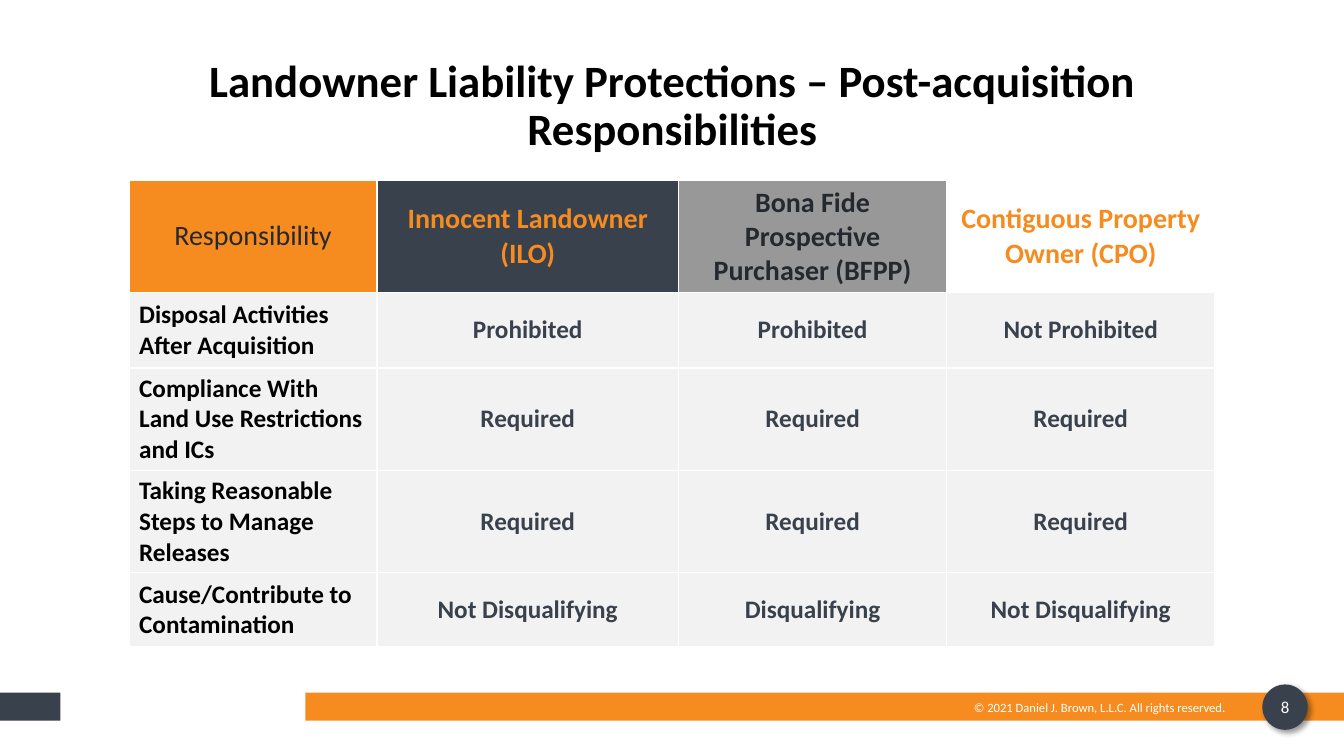
from lxml import etree
from pptx import Presentation
from pptx.dml.color import RGBColor
from pptx.enum.shapes import MSO_SHAPE
from pptx.enum.text import MSO_ANCHOR, MSO_AUTO_SIZE, PP_ALIGN
from pptx.oxml.ns import nsdecls
from pptx.util import Pt

RECT, OVAL = MSO_SHAPE.RECTANGLE, MSO_SHAPE.OVAL
LEFT, MID, RIGHT = PP_ALIGN.LEFT, PP_ALIGN.CENTER, PP_ALIGN.RIGHT
TOP, CENTER = MSO_ANCHOR.TOP, MSO_ANCHOR.MIDDLE
FIXED = MSO_AUTO_SIZE.NONE

ORANGE = RGBColor(0xF6, 0x8C, 0x1F)
SLATE = RGBColor(0x39, 0x41, 0x4D)
DARK = RGBColor(0x24, 0x29, 0x30)
GRAY = RGBColor(0x98, 0x98, 0x98)
PALE = RGBColor(0xF2, 0xF2, 0xF2)
WHITE = RGBColor(0xFF, 0xFF, 0xFF)
BLACK = RGBColor(0, 0, 0)

TITLE = "Landowner Liability Protections – Post-acquisition Responsibilities"
RIGHTS = "© 2021 Daniel J. Brown, L.L.C. All rights reserved."
NUMBER = "8"

# text, fill, font colour, bold
HEADS = [
    ("Responsibility", ORANGE, DARK, False),
    ("Innocent Landowner\n(ILO)", SLATE, ORANGE, True),
    ("Bona Fide Prospective Purchaser (BFPP)", GRAY, DARK, True),
    ("Contiguous Property Owner (CPO)", WHITE, ORANGE, True),
]
DUTIES = [
    ("Disposal Activities After Acquisition",
     "Prohibited", "Prohibited", "Not Prohibited"),
    ("Compliance With Land Use Restrictions and ICs",
     "Required", "Required", "Required"),
    ("Taking Reasonable Steps to Manage Releases",
     "Required", "Required", "Required"),
    ("Cause/Contribute to Contamination",
     "Not Disqualifying", "Disqualifying", "Not Disqualifying"),
]
COLS = [246, 299, 266, 266]
ROWS = [111, 75, 102, 101, 74]

PX = 9144  # 100 px to the inch


def scale(*sizes):
    return [size * PX for size in sizes]


def write(frame, text, size, color, bold=False, align=MID):
    """Fill a text frame, one paragraph for each line of text."""
    for i, line in enumerate(text.split("\n")):
        para = frame.add_paragraph() if i else frame.paragraphs[0]
        para.alignment = align
        run = para.add_run()
        run.text = line
        font = run.font
        font.name, font.size, font.bold = "Calibri", Pt(size), bold
        font.color.rgb = color


def draw(slide, kind, box, color):
    shape = slide.shapes.add_shape(kind, *scale(*box))
    shape.shadow.inherit = False
    shape.fill.solid()
    shape.fill.fore_color.rgb = color
    shape.line.fill.background()
    return shape


def shade(shape):
    """Give a shape a soft shadow to the lower right."""
    effects = shape.element.spPr.find("{*}effectLst")
    effects.append(etree.fromstring(
        f'<a:outerShdw {nsdecls("a")} blurRad="{Pt(4)}" dist="{Pt(3)}" '
        'dir="2700000" algn="tl" rotWithShape="0"><a:srgbClr val="000000">'
        '<a:alpha val="40000"/></a:srgbClr></a:outerShdw>'))


def label(slide, box, text, size, align, wrap):
    frame = slide.shapes.add_textbox(*scale(*box)).text_frame
    frame.word_wrap = wrap
    write(frame, text, size, WHITE, align=align)


def add_footer(slide):
    draw(slide, RECT, (303, 687, 1030, 28), ORANGE)
    draw(slide, RECT, (0, 687, 60, 28), SLATE)
    shade(draw(slide, OVAL, (1252, 679, 45, 45), SLATE))
    label(slide, (1250, 686, 49, 30), NUMBER, 12, MID, True)
    label(slide, (953, 689, 272, 25), RIGHTS, 9, RIGHT, False)


def add_title(slide):
    title = slide.shapes.title
    title.left, title.top, title.width, title.height = scale(95, 53, 1144, 98)
    frame = title.text_frame
    frame.word_wrap, frame.auto_size = True, FIXED
    frame.vertical_anchor = TOP
    write(frame, TITLE, 32, BLACK, True)
    frame.paragraphs[0].line_spacing = 0.9


def set_cell(cell, fill, *style):
    cell.fill.solid()
    cell.fill.fore_color.rgb = fill
    cell.vertical_anchor = CENTER
    write(cell.text_frame, *style)


def add_grid(slide):
    box = scale(128, 179, sum(COLS), sum(ROWS))
    table = slide.shapes.add_table(len(ROWS), len(COLS), *box).table
    table.horz_banding = False
    for col, width in zip(table.columns, COLS):
        col.width = width * PX
    for row, height in zip(table.rows, ROWS):
        row.height = height * PX
    for c, (text, fill, color, bold) in enumerate(HEADS):
        set_cell(table.cell(0, c), fill, text, 20, color, bold)
    for r, duty in enumerate(DUTIES, 1):
        for c, text in enumerate(duty):
            color, align = (SLATE, MID) if c else (BLACK, LEFT)
            set_cell(table.cell(r, c), PALE, text, 18, color, True, align)


def main():
    deck = Presentation()
    deck.slide_width, deck.slide_height = scale(1333, 750)
    slide = deck.slides.add_slide(deck.slide_layouts[5])
    add_footer(slide)
    add_title(slide)
    add_grid(slide)
    deck.save("out.pptx")


if __name__ == "__main__":
    main()
